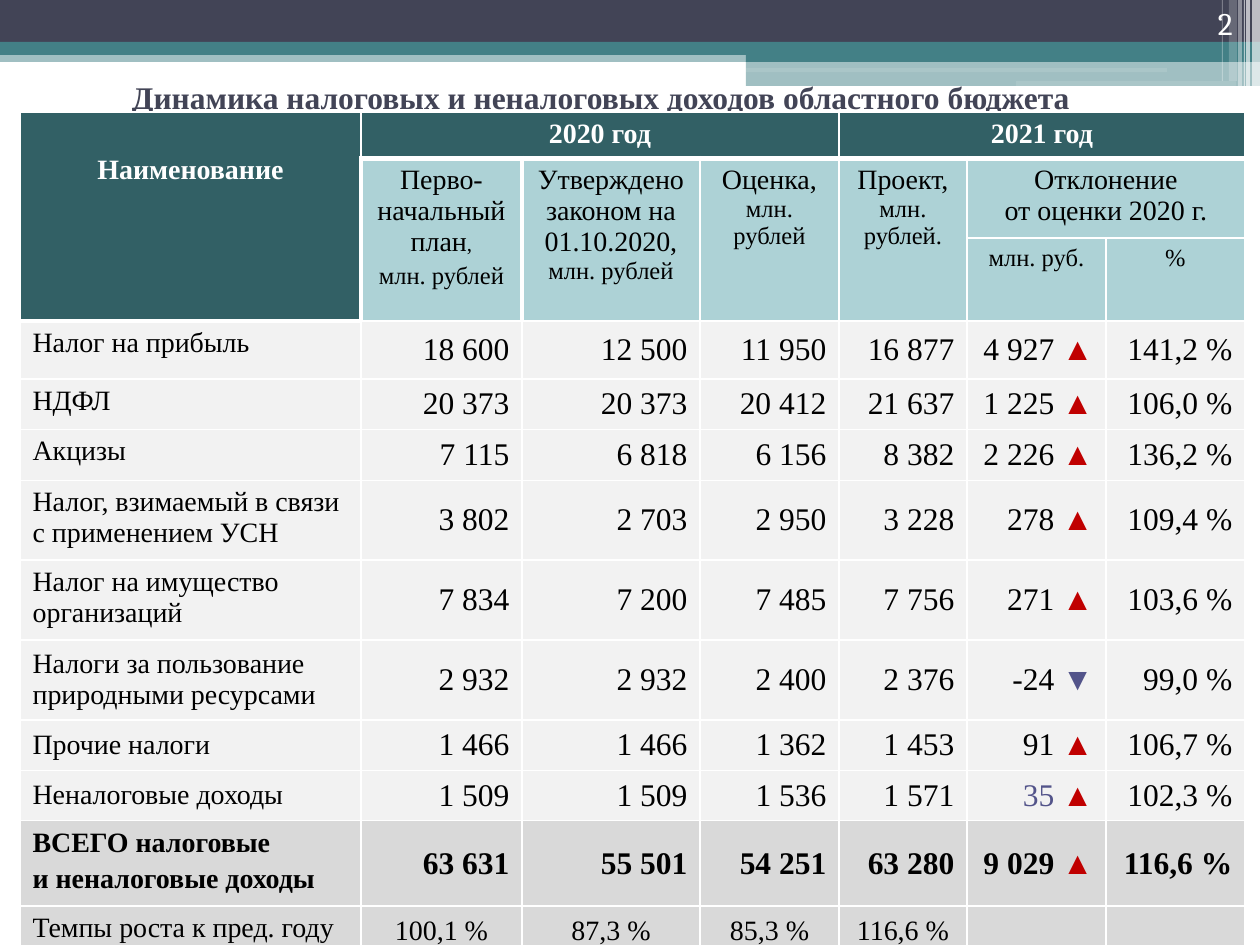
from lxml import etree
from pptx import Presentation
from pptx.dml.color import RGBColor
from pptx.enum.shapes import MSO_SHAPE
from pptx.enum.text import MSO_ANCHOR, PP_ALIGN
from pptx.oxml.ns import qn
from pptx.util import Emu, Pt

RECT, ROUND = MSO_SHAPE.RECTANGLE, MSO_SHAPE.ROUNDED_RECTANGLE
LEFT, CENTER, RIGHT = PP_ALIGN.LEFT, PP_ALIGN.CENTER, PP_ALIGN.RIGHT
TOP, MIDDLE, BOTTOM = MSO_ANCHOR.TOP, MSO_ANCHOR.MIDDLE, MSO_ANCHOR.BOTTOM

WHITE = RGBColor(0xFF, 0xFF, 0xFF)
BLACK = RGBColor(0x00, 0x00, 0x00)
SLATE = RGBColor(0x42, 0x44, 0x56)
TEAL = RGBColor(0x43, 0x80, 0x86)
HEAD = RGBColor(0x32, 0x60, 0x65)
SUBHEAD = RGBColor(0xAD, 0xD2, 0xD6)
BODY = RGBColor(0xF2, 0xF2, 0xF2)
TOTAL = RGBColor(0xD9, 0xD9, 0xD9)
RED = RGBColor(0xC0, 0x00, 0x00)
INDIGO = RGBColor(0x53, 0x54, 0x8A)
SERIF = "Times New Roman"

COLS = [341, 161, 178, 139, 128, 139, 139]
ROWS = [45, 79, 81, 58, 49, 51, 79, 78, 79, 49, 49, 85, 50]
MERGES = [(0, 0, 2, 0), (0, 1, 0, 3), (0, 4, 0, 6), (1, 5, 1, 6)]
MERGES += [(1, c, 2, c) for c in range(1, 5)]
SUBHEADS = {
    (1, 1): [[("Перво-начальный план", 16), (",", 12)], [("млн. рублей", 14)]],
    (1, 2): [[("Утверждено законом на 01.10.2020, ", 16), ("млн. рублей", 14)]],
    (1, 3): [[("Оценка, ", 16), ("млн. рублей", 14)]],
    (1, 4): [[("Проект, ", 16), ("млн. рублей.", 14)]],
    (1, 5): [[("Отклонение", 16)], [("от оценки 2020 г.", 16)]],
    (2, 5): [[("млн. руб.", 14)]],
    (2, 6): [[("%", 14)]],
}
INCOMES = [
    ("Налог на прибыль", "18 600", "12 500", "11 950", "16 877", "4 927 ▲", "141,2 %"),
    ("НДФЛ", "20 373", "20 373", "20 412", "21 637", "1 225 ▲", "106,0 %"),
    ("Акцизы", "7 115", "6 818", "6 156", "8 382", "2 226 ▲", "136,2 %"),
    ("Налог, взимаемый в связи с применением УСН",
     "3 802", "2 703", "2 950", "3 228", "278 ▲", "109,4 %"),
    ("Налог на имущество организаций",
     "7 834", "7 200", "7 485", "7 756", "271 ▲", "103,6 %"),
    ("Налоги за пользование природными ресурсами",
     "2 932", "2 932", "2 400", "2 376", "-24 ▼", "99,0 %"),
    ("Прочие налоги", "1 466", "1 466", "1 362", "1 453", "91 ▲", "106,7 %"),
    ("Неналоговые доходы", "1 509", "1 509", "1 536", "1 571", "35 ▲", "102,3 %"),
    ("ВСЕГО налоговые\nи неналоговые доходы",
     "63 631", "55 501", "54 251", "63 280", "9 029 ▲", "116,6 %"),
]
GROWTH = ("Темпы роста к пред. году", "100,1 %", "87,3 %", "85,3 %", "116,6 %")


def px(n):
    """Convert slide pixels to EMU."""
    return Emu(round(n * 914400 / 126))


def style(p, size, color, align=LEFT, bold=False, name=SERIF):
    """Format a whole paragraph."""
    p.alignment = align
    p.font.size, p.font.bold, p.font.name = Pt(size), bold, name
    p.font.color.rgb = color


def add_bar(s, kind, box, color, alpha):
    """Add one borderless band with the given opacity in percent."""
    sp = s.shapes.add_shape(kind, *map(px, box))
    sp.shadow.inherit = False
    sp.line.fill.background()
    sp.fill.solid()
    sp.fill.fore_color.rgb = color
    if alpha < 100:
        clr = sp.element.spPr.find(".//" + qn("a:srgbClr"))
        etree.SubElement(clr, qn("a:alpha")).set("val", str(alpha * 1000))


def add_banner(s, x, y, w):
    """Draw the layered band across the top with its stripes at the right."""
    mid = x + 746
    bands = [
        (RECT, x, y + 50, w, 12, TEAL, 50),
        (RECT, x, y, w, 43, SLATE, 100),
        (RECT, x, y + 42, w, 13, TEAL, 100),
        (RECT, mid, y + 49, w - 746, 13, TEAL, 100),
        (RECT, mid, y + 61, w - 746, 25, TEAL, 50),
        (ROUND, mid - 1, y + 68, 422, 4, WHITE, 11),
        (ROUND, x + 1016, y + 81, 220, 5, WHITE, 11),
    ]
    for kind, *box, color, alpha in bands:
        add_bar(s, kind, box, color, alpha)
    stripes = [(8, 8, 86, 65), (14, 4, 86, 65), (16, 1, 86, 60),
               (22, 4, 86, 40), (31, 8, 81, 20), (38, 1, 81, 30)]
    for back, width, height, alpha in stripes:
        add_bar(s, RECT, (x + w - back, y, width, height), WHITE, alpha)


def add_title(s, x, y, w, h):
    """Place the title placeholder in front of the banner."""
    sp = s.shapes.title
    sp.element.getparent().append(sp.element)
    sp.left, sp.top, sp.width, sp.height = map(px, (x, y, w, h))
    tf = sp.text_frame
    tf.text = "Динамика налоговых и неналоговых доходов областного бюджета"
    tf.vertical_anchor = TOP
    style(tf.paragraphs[0], 18, SLATE, CENTER, True)


def add_page_number(s, x, y, w, h):
    """Write the page number in the banner."""
    tf = s.shapes.add_textbox(*map(px, (x, y, w, h))).text_frame
    tf.word_wrap = True
    tf.vertical_anchor = BOTTOM
    tf.text = "2"
    style(tf.paragraphs[0], 18, WHITE, RIGHT, name="Cambria")


def set_borders(cell, r, c):
    """Draw white cell borders, thick around the header blocks."""
    sub = r in (1, 2)
    thick = {
        "L": sub and c in (1, 2),
        "R": sub and c in (0, 1),
        "T": (r == 1 and c > 0) or (r == 3 and c == 0),
        "B": r == 0 or (r == 2 and c == 0),
    }
    tcPr = cell._tc.get_or_add_tcPr()
    for side, wide in thick.items():
        ln = etree.SubElement(tcPr, qn("a:ln" + side), w=str(Pt(3 if wide else 1)))
        fill = etree.SubElement(ln, qn("a:solidFill"))
        etree.SubElement(fill, qn("a:srgbClr"), val=str(WHITE))


def write(cell, text, size, color=BLACK, align=LEFT, bold=False, anchor=TOP):
    """Write plain lines into a cell."""
    cell.vertical_anchor = anchor
    cell.text = text
    for i, p in enumerate(cell.text_frame.paragraphs):
        style(p, size, color, align, bold)
        if i:
            p.space_before = Pt(size * 0.2)


def write_subhead(cell, lines):
    """Write header lines made of runs of differing size."""
    tf = cell.text_frame
    for i, runs in enumerate(lines):
        p = tf.add_paragraph() if i else tf.paragraphs[0]
        style(p, runs[0][1], BLACK, CENTER)
        if i and runs[0][1] == 14:
            p.space_before = Pt(3)
        for text, size in runs:
            r = p.add_run()
            r.text, r.font.size = text, Pt(size)


def write_change(cell, text, bold):
    """Write a deviation followed by a coloured direction mark."""
    value, mark = text.rsplit(" ", 1)
    cell.vertical_anchor = MIDDLE
    p = cell.text_frame.paragraphs[0]
    style(p, 18, BLACK, RIGHT)
    number, arrow = p.add_run(), p.add_run()
    number.text, arrow.text = value + " ", mark
    number.font.bold = bold
    number.font.color.rgb = INDIGO if value == "35" else BLACK
    arrow.font.color.rgb = RED if mark == "▲" else INDIGO


def add_income_table(s, x, y):
    """Build the table of regional income."""
    frame = s.shapes.add_table(len(ROWS), len(COLS), px(x), px(y),
                               px(sum(COLS)), px(sum(ROWS)))
    table = frame.table
    for col, width in zip(table.columns, COLS):
        col.width = px(width)
    for r, (row, height) in enumerate(zip(table.rows, ROWS)):
        row.height = px(height)
        for c, cell in enumerate(row.cells):
            set_borders(cell, r, c)
            cell.fill.solid()
            cell.fill.fore_color.rgb = (
                HEAD if r == 0 or (r < 3 and c == 0)
                else SUBHEAD if r < 3 else BODY if r < 11 else TOTAL)
    for r1, c1, r2, c2 in MERGES:
        table.cell(r1, c1).merge(table.cell(r2, c2))
    for c, text in ((0, "Наименование"), (1, "2020 год"), (4, "2021 год")):
        write(table.cell(0, c), text, 16, WHITE, CENTER, True)
    table.cell(0, 0).margin_top = px(43)
    for (r, c), lines in SUBHEADS.items():
        write_subhead(table.cell(r, c), lines)
    for r, (name, *values) in enumerate(INCOMES, 3):
        bold = r == 11
        write(table.cell(r, 0), name, 16, bold=bold,
              anchor=MIDDLE if 8 <= r <= 10 else TOP)
        for c, value in enumerate(values, 1):
            if c == 5:
                write_change(table.cell(r, c), value, bold)
            else:
                write(table.cell(r, c), value, 18, BLACK, RIGHT, bold, MIDDLE)
    write(table.cell(12, 0), GROWTH[0], 16)
    for c, value in enumerate(GROWTH[1:], 1):
        write(table.cell(12, c), value, 16, BLACK, CENTER, anchor=MIDDLE)


def main():
    """Build and save the slide."""
    prs = Presentation()
    prs.slide_width, prs.slide_height = px(1260), px(945)
    s = prs.slides.add_slide(prs.slide_layouts[5])
    add_banner(s, 0, 0, 1260)
    add_title(s, 20, 72, 1162, 79)
    add_page_number(s, 951, -18, 294, 66)
    add_income_table(s, 20, 112)
    prs.save("out.pptx")


if __name__ == "__main__":
    main()
